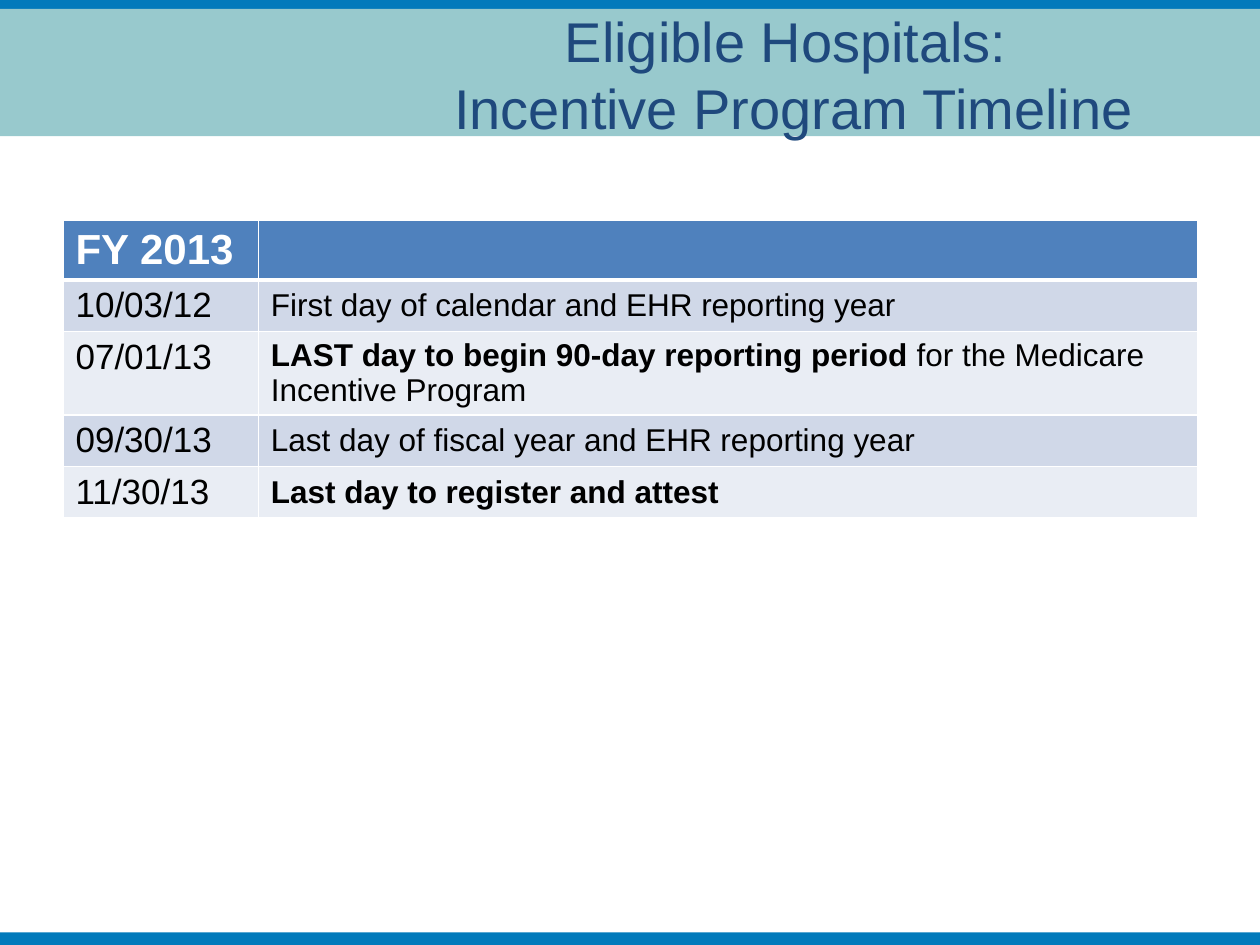
"""Build the eligible hospitals incentive timeline slide."""
import pptx
import pptx.dml.color
import pptx.enum.shapes
import pptx.enum.text
import pptx.oxml
import pptx.oxml.ns
import pptx.util
from pptx.util import Inches

COLORS = {
    "bar": "027ABB", "band": "98C9CD", "title": "1F497D", "header": "4F81BD",
    "odd": "D0D8E8", "even": "E9EDF4", "white": "FFFFFF", "black": "000000",
}
ANCHOR = pptx.enum.text.MSO_ANCHOR
TIMELINE = [
    ("10/03/12", [("First day of calendar and EHR reporting year", False)]),
    ("07/01/13", [("LAST day to begin 90-day reporting period ", True),
                  ("for the Medicare Incentive Program", False)]),
    ("09/30/13", [("Last day of fiscal year and EHR reporting year", False)]),
    ("11/30/13", [("Last day to register and attest", True)]),
]


def rgb(name):
    """Return the named palette colour."""
    return pptx.dml.color.RGBColor.from_string(COLORS[name])


def add_text(p, text, size=18, color="black", bold=False, font="Arial"):
    """Add formatted text to a paragraph, with newlines as line breaks."""
    for i, line in enumerate(text.split("\n")):
        if i:
            p.add_line_break()
        r = p.add_run()
        r.text = line
        r.font.name, r.font.size, r.font.bold = font, pptx.util.Pt(size), bold
        r.font.color.rgb = rgb(color)


class SlideBuilder:
    """Hold the current slide and draw its elements."""

    def __init__(self, slide):
        """Keep the slide to draw on."""
        self.s = slide

    def bar(self, top, height, color):
        """Draw a full-width bar."""
        sp = self.s.shapes.add_shape(
            pptx.enum.shapes.MSO_SHAPE.RECTANGLE,
            0, Inches(top), Inches(10.01), Inches(height))
        sp.shadow.inherit = False
        sp.fill.solid()
        sp.fill.fore_color.rgb = rgb(color)
        sp.line.fill.background()

    def title(self, text, left, top, width, height):
        """Place the title above the bars."""
        sp = self.s.shapes.title
        sp.left, sp.top = Inches(left), Inches(top)
        sp.width, sp.height = Inches(width), Inches(height)
        sp._element.getparent().append(sp._element)
        tf = sp.text_frame
        tf.word_wrap = True
        tf.auto_size = pptx.enum.text.MSO_AUTO_SIZE.NONE
        tf.vertical_anchor = ANCHOR.MIDDLE
        p = tf.paragraphs[0]
        p.alignment = pptx.enum.text.PP_ALIGN.CENTER
        add_text(p, text, size=32, color="title")

    def cell(self, cell, fill, runs=(), size=18, color="black",
             anchor=ANCHOR.TOP, top=1, bottom=1):
        """Fill, border and write one table cell."""
        tc_pr = cell._tc.get_or_add_tcPr()
        for side, width in zip("LRTB", (1, 1, top, bottom)):
            tc_pr.append(pptx.oxml.parse_xml(
                f'<a:ln{side} {pptx.oxml.ns.nsdecls("a")} w="{width * 12700}">'
                f'<a:solidFill><a:srgbClr val="{COLORS["white"]}"/></a:solidFill>'
                f'</a:ln{side}>'))
        cell.fill.solid()
        cell.fill.fore_color.rgb = rgb(fill)
        cell.vertical_anchor = anchor
        for text, bold in runs:
            add_text(cell.text_frame.paragraphs[0], text, size, color, bold)

    def table(self, heading, rows, left, top, widths, row_height):
        """Draw the timeline table."""
        count = len(rows) + 1
        table = self.s.shapes.add_table(
            count, len(widths), Inches(left), Inches(top),
            Inches(sum(widths)), Inches(row_height * count)).table
        for column, width in zip(table.columns, widths):
            column.width = Inches(width)
        for row in table.rows:
            row.height = Inches(row_height)
        self.cell(table.cell(0, 0), "header", [(heading, True)], 24, "white", bottom=3)
        self.cell(table.cell(0, 1), "header", bottom=3)
        for i, (date, event) in enumerate(rows, 1):
            fill = "odd" if i % 2 else "even"
            rule = 3 if i == 1 else 1
            self.cell(table.cell(i, 0), fill, [(date, False)], 20, top=rule)
            self.cell(table.cell(i, 1), fill, event, anchor=ANCHOR.MIDDLE, top=rule)


def main():
    """Create and save the presentation."""
    prs = pptx.Presentation()
    prs.slide_width, prs.slide_height = Inches(10), Inches(7.5)
    slide = SlideBuilder(prs.slides.add_slide(prs.slide_layouts[5]))
    slide.bar(-0.01, 0.26, "bar")
    slide.bar(0.07, 1.01, "band")
    slide.bar(7.4, 0.1, "bar")
    slide.title("Eligible Hospitals: \nIncentive Program Timeline", 2.6, 0.09, 7.4, 0.99)
    slide.table("FY 2013", TIMELINE, 0.5, 1.75, (1.55, 7.46), 0.41)
    prs.save("out.pptx")


if __name__ == "__main__":
    main()
